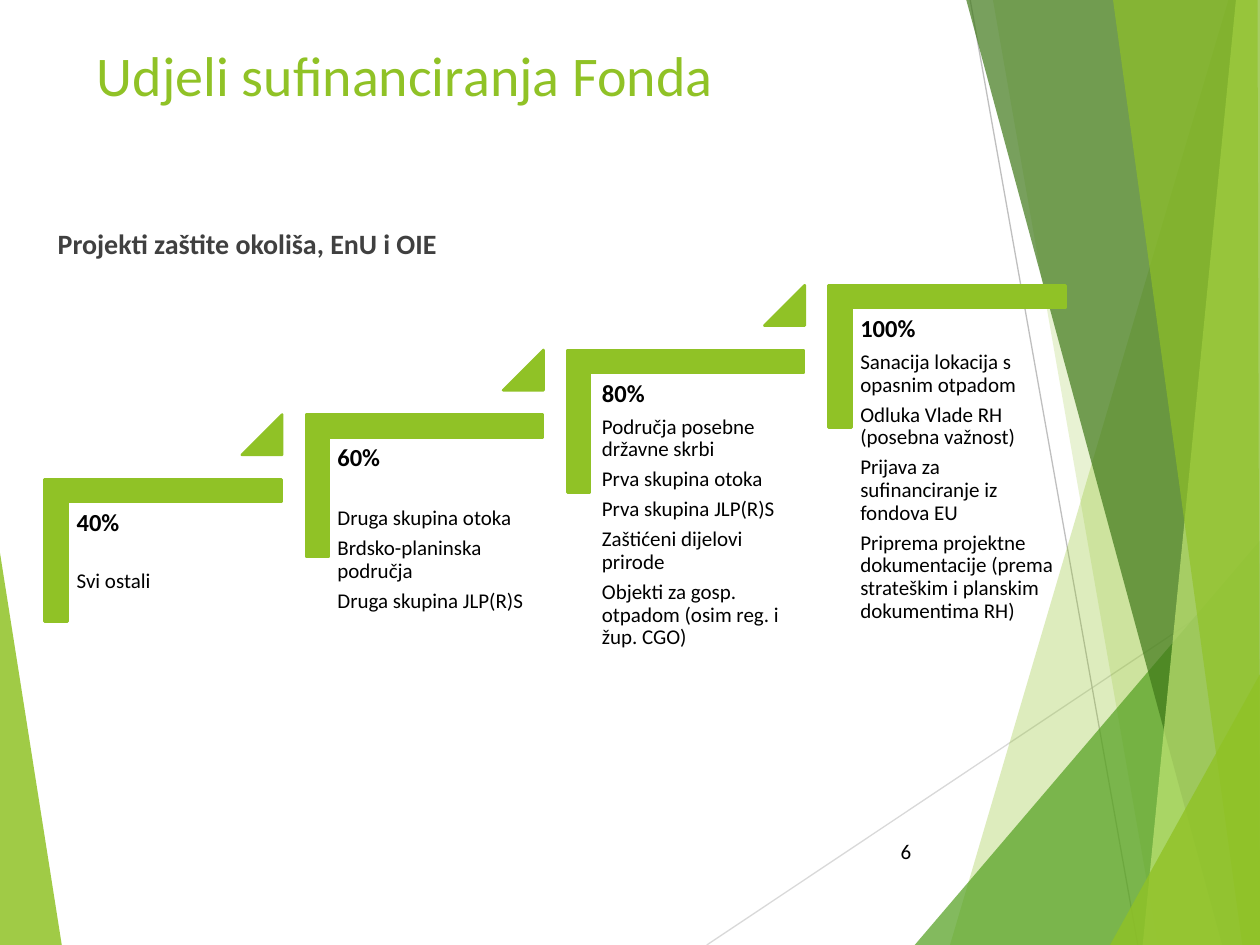
from dataclasses import dataclass

from lxml import etree
from pptx import Presentation
from pptx.dml.color import RGBColor
from pptx.enum import shapes, text
from pptx.oxml import ns
from pptx.util import Pt

LIME = RGBColor(0x90, 0xC2, 0x26)
GREEN = RGBColor(0x54, 0xA0, 0x21)
DARK_GREEN = RGBColor(0x3F, 0x78, 0x19)
PALE_LIME = RGBColor(0xC0, 0xE4, 0x74)
LIGHT_GRAY = RGBColor(0xD9, 0xD9, 0xD9)
MID_GRAY = RGBColor(0xBF, 0xBF, 0xBF)
DARK_GRAY = RGBColor(0x40, 0x40, 0x40)
BLACK = RGBColor(0, 0, 0)
FONT = "Calibri"

WIDTH, HEIGHT = 720, 540
STEP_RIGHT, STEP_UP = 149.3, 36.95
CORNER_LEFT, CORNER_TOP = 52.56, 246.96
CORNER_WIDTH, CORNER_HEIGHT = 81.36, 135.36
TRIANGLE_LEFT, TRIANGLE_TOP, TRIANGLE_SIZE = 138.2, 236.9, 23.04
TEXT_TOP, TEXT_HEIGHT = 287.4, 106.6


@dataclass
class Facet:
    points: list[tuple[float, float]]
    color: RGBColor
    opacity: int


@dataclass
class Ray:
    start: tuple[float, float]
    end: tuple[float, float]
    color: RGBColor


@dataclass
class Step:
    share: str
    items: list[str]
    left: float
    width: float = 121.7
    heading_gap: float = 4.9


LEFT_FACET = Facet([(0, 316), (35.3, 540), (0, 540)], LIME, 85)
RAYS = [
    Ray((403.9, 540), (720, 329), LIGHT_GRAY),
    Ray((554.4, 0), (650.2, 540), MID_GRAY),
]
RIGHT_FACETS = [
    Facet([(702, 0), (542.9, 540), (720, 540), (720, 0)], LIME, 30),
    Facet([(567.4, 0), (661.7, 540), (720, 540), (720, 0)], LIME, 20),
    Facet([(522.7, 540), (720, 308.9), (720, 540)], GREEN, 72),
    Facet([(552.2, 0), (698.4, 540), (720, 540), (720, 0)], DARK_GREEN, 70),
    Facet([(706.3, 0), (653, 540), (720, 540), (720, 0)], PALE_LIME, 70),
    Facet([(636, 0), (709.9, 540), (720, 540), (718.6, 0)], LIME, 65),
    Facet([(634.3, 540), (720, 385.2), (720, 540)], LIME, 80),
]
STEPS = [
    Step("40%", ["Svi ostali"], 39.6, heading_gap=19.2),
    Step("60%", ["Druga skupina otoka", "Brdsko-planinska područja",
                 "Druga skupina JLP(R)S"], 188.6, heading_gap=20.3),
    Step("80%", ["Područja posebne državne skrbi", "Prva skupina otoka",
                 "Prva skupina JLP(R)S", "Zaštićeni dijelovi prirode",
                 "Objekti za gosp. otpadom (osim reg. i žup. CGO)"],
         339.8, width=118.1),
    Step("100%", ["Sanacija lokacija s opasnim otpadom",
                  "Odluka Vlade RH (posebna važnost)",
                  "Prijava za sufinanciranje iz fondova EU",
                  "Priprema projektne dokumentacije (prema strateškim "
                  "i planskim dokumentima RH)"], 487.4),
]


def draw_facet(slide, facet: Facet) -> None:
    first, *others = [(Pt(x), Pt(y)) for x, y in facet.points]
    builder = slide.shapes.build_freeform(*first)
    builder.add_line_segments(others)
    shape = builder.convert_to_shape()
    shape.shadow.inherit = False
    shape.fill.solid()
    shape.fill.fore_color.rgb = facet.color
    shape.line.fill.background()
    color = shape._element.spPr.find(".//" + ns.qn("a:srgbClr"))
    etree.SubElement(color, ns.qn("a:alpha"), val=str(facet.opacity * 1000))


def draw_ray(slide, ray: Ray) -> None:
    line = slide.shapes.add_connector(
        shapes.MSO_CONNECTOR.STRAIGHT, *map(Pt, ray.start + ray.end))
    line.line.color.rgb = ray.color
    line.line.width = Pt(0.75)
    etree.SubElement(line._element.spPr, ns.qn("a:effectLst"))


def draw_solid(slide, kind, left: float, top: float, width: float,
               height: float):
    shape = slide.shapes.add_shape(kind, Pt(left), Pt(top), Pt(width), Pt(height))
    shape.shadow.inherit = False
    shape.fill.solid()
    shape.fill.fore_color.rgb = LIME
    shape.line.color.rgb = LIME
    shape.line.width = Pt(1.5)
    return shape


def style(paragraph, size: float, color: RGBColor, bold: bool = False) -> None:
    for run in paragraph.runs:
        run.font.name = FONT
        run.font.size = Pt(size)
        run.font.bold = bold
        run.font.color.rgb = color


def add_text(slide, content: str, left: float, top: float, width: float,
             height: float):
    box = slide.shapes.add_textbox(Pt(left), Pt(top), Pt(width), Pt(height))
    box.text_frame.word_wrap = True
    box.text_frame.text = content
    return box.text_frame


def draw_step(slide, step: Step, index: int) -> None:
    across, up = index * STEP_RIGHT, index * STEP_UP
    corner = draw_solid(slide, shapes.MSO_SHAPE.CORNER, CORNER_LEFT + across,
                        CORNER_TOP - up, CORNER_WIDTH, CORNER_HEIGHT)
    corner.rotation = 90
    corner.adjustments[0] = corner.adjustments[1] = 0.16

    frame = add_text(slide, "\n".join([step.share, *step.items]), step.left,
                     TEXT_TOP - up, step.width, TEXT_HEIGHT)
    frame.margin_left = frame.margin_right = Pt(4.2)
    frame.margin_top = frame.margin_bottom = Pt(4.2)
    for paragraph in frame.paragraphs:
        paragraph.line_spacing = 0.9
        paragraph.space_after = Pt(4.2)
        style(paragraph, 12, BLACK)
    heading = frame.paragraphs[0]
    heading.space_after = Pt(step.heading_gap)
    style(heading, 14, BLACK, bold=True)

    if index < len(STEPS) - 1:
        triangle = draw_solid(slide, shapes.MSO_SHAPE.ISOSCELES_TRIANGLE,
                              TRIANGLE_LEFT + across, TRIANGLE_TOP - up,
                              TRIANGLE_SIZE, TRIANGLE_SIZE)
        triangle.adjustments[0] = 1


def set_title(slide) -> None:
    title = slide.shapes.title
    title.left, title.top = Pt(48.2), Pt(19.4)
    title.width, title.height = Pt(519.1), Pt(74.9)
    title.text_frame.text = "Udjeli sufinanciranja Fonda"
    title.text_frame.vertical_anchor = text.MSO_ANCHOR.TOP
    paragraph = title.text_frame.paragraphs[0]
    paragraph.alignment = text.PP_ALIGN.LEFT
    style(paragraph, 32, LIME)


def main() -> None:
    presentation = Presentation()
    presentation.slide_width, presentation.slide_height = Pt(WIDTH), Pt(HEIGHT)
    slide = presentation.slides.add_slide(presentation.slide_layouts[5])

    draw_facet(slide, LEFT_FACET)
    for ray in RAYS:
        draw_ray(slide, ray)
    for facet in RIGHT_FACETS:
        draw_facet(slide, facet)
    set_title(slide)
    for index, step in enumerate(STEPS):
        draw_step(slide, step, index)

    number = add_text(slide, "6", 507.6, 475.9, 40.3, 28.8)
    style(number.paragraphs[0], 12, BLACK)
    subtitle = add_text(slide, "Projekti zaštite okoliša, EnU i OIE",
                        25.9, 126, 360, 26.6)
    style(subtitle.paragraphs[0], 16, DARK_GRAY, bold=True)
    presentation.save("out.pptx")


if __name__ == "__main__":
    main()
